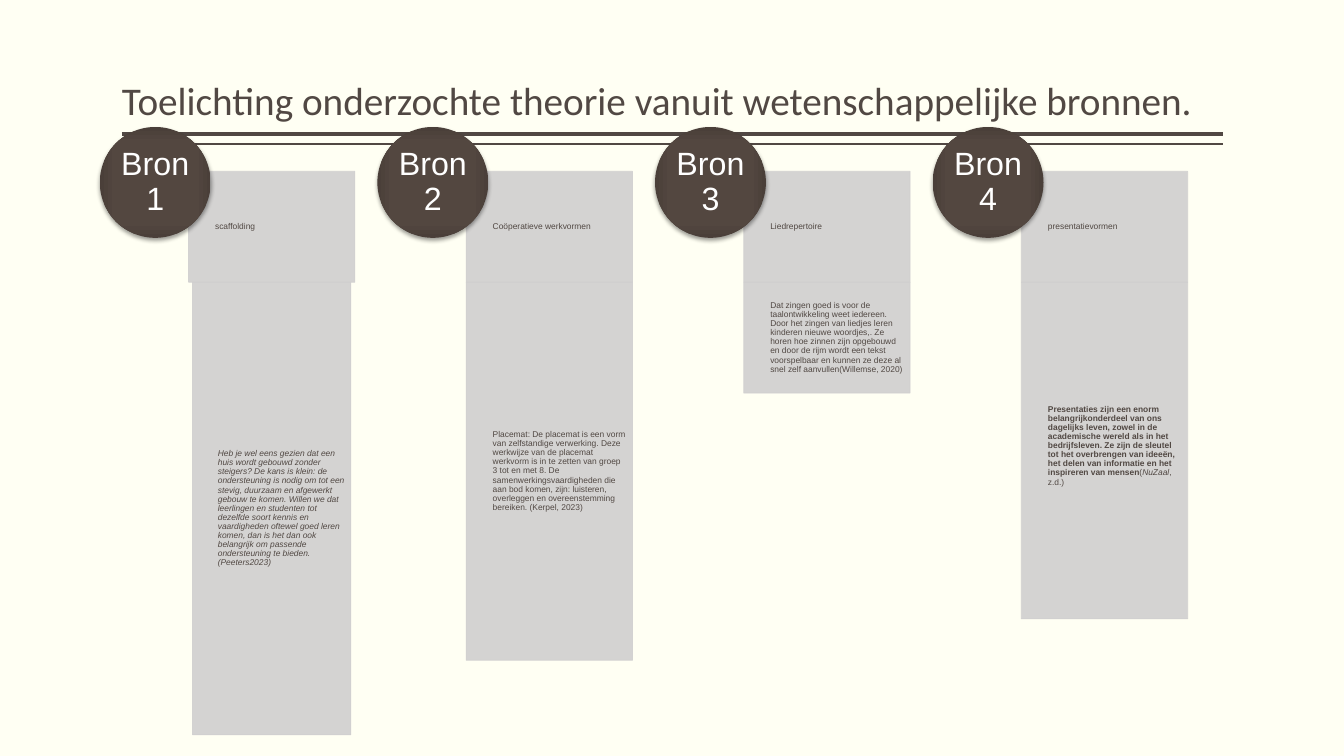
from dataclasses import dataclass

from lxml import etree
from pptx import Presentation
from pptx.dml.color import RGBColor
from pptx.enum.shapes import MSO_CONNECTOR, MSO_SHAPE
from pptx.enum.text import MSO_ANCHOR, PP_ALIGN
from pptx.oxml import parse_xml
from pptx.oxml.ns import qn
from pptx.util import Inches, Pt

RECT, OVAL = MSO_SHAPE.RECTANGLE, MSO_SHAPE.OVAL
STRAIGHT = MSO_CONNECTOR.STRAIGHT
MIDDLE, BOTTOM = MSO_ANCHOR.MIDDLE, MSO_ANCHOR.BOTTOM
LEFT, CENTER = PP_ALIGN.LEFT, PP_ALIGN.CENTER

INK, PAPER, GREY, WHITE = "514843", "FFFFF3", "D0CFCF", "FFFFFF"
STOPS = ((0, "544740"), (71, "534740"), (100, "4A3F39"))
NS = 'xmlns:a="http://schemas.openxmlformats.org/drawingml/2006/main"'

PITCH = 8.26 / 3
CARD_X, CARD_W = 1.87, 1.65
HEAD_Y, HEAD_H = 1.7, 1.1
DISC_X, DISC_Y, DISC_D = 0.99, 1.26, 1.1
LABEL_D = 0.78
TEXT_SHARE = 0.84  # share of a card's width that holds text


@dataclass(frozen=True)
class Box:
    x: float
    y: float
    w: float
    h: float


@dataclass(frozen=True)
class Piece:
    text: str
    bold: bool = False
    italic: bool = False


@dataclass(frozen=True)
class Style:
    size: float
    font: str = "Arial"
    color: str = INK
    align: PP_ALIGN = LEFT
    anchor: MSO_ANCHOR = MIDDLE
    inset: tuple[float, float, float, float] = (0, 0.05, 0.05, 0.05)


@dataclass(frozen=True)
class Source:
    topic: str
    pieces: tuple[Piece, ...]
    height: float
    trim: float = 0  # how far the body is narrowed on each side
    foot: float = 0.05


TITLE = Style(28, "Calibri", anchor=BOTTOM, inset=(0, 0.05, 0, 0.05))
LABEL = Style(23, color=WHITE, align=CENTER, inset=(0, 0, 0, 0))

SOURCES = (
    Source("scaffolding", (Piece(
        "Heb je wel eens gezien dat een huis wordt gebouwd zonder steigers? "
        "De kans is klein: de ondersteuning is nodig om tot een stevig, "
        "duurzaam en afgewerkt gebouw te komen. Willen we dat leerlingen en "
        "studenten tot dezelfde soort kennis en vaardigheden oftewel goed "
        "leren komen, dan is het dan ook belangrijk om passende "
        "ondersteuning te bieden.(Peeters2023)", italic=True),),
        4.49, trim=0.04),
    Source("Coöperatieve werkvormen", (Piece(
        "Placemat: De placemat is een vorm van zelfstandige verwerking. "
        "Deze werkwijze van de placemat werkvorm is in te zetten van groep "
        "3 tot en met 8. De samenwerkingsvaardigheden die aan bod komen, "
        "zijn: luisteren, overleggen en overeenstemming bereiken. "
        "(Kerpel, 2023)"),), 3.75),
    Source("Liedrepertoire", (Piece(
        "Dat zingen goed is voor de taalontwikkeling weet iedereen. Door "
        "het zingen van liedjes leren kinderen nieuwe woordjes,. Ze horen "
        "hoe zinnen zijn opgebouwd en door de rijm wordt een tekst "
        "voorspelbaar en kunnen ze deze al snel zelf aanvullen"
        "(Willemse, 2020)"),), 1.1),
    Source("presentatievormen", (
        Piece("Presentaties zijn een enorm belangrijkonderdeel van ons "
              "dagelijks leven, zowel in de academische wereld als in het "
              "bedrijfsleven. Ze zijn de sleutel tot het overbrengen van "
              "ideeën, het delen van informatie en het inspireren van mensen",
              bold=True),
        Piece("("), Piece("NuZaal", italic=True), Piece(", z.d.)")),
        3.34, foot=0.14),
)


def rgb(code: str) -> RGBColor:
    return RGBColor.from_string(code)


def add_text(slide, box: Box, pieces: tuple[Piece, ...], style: Style) -> None:
    shape = slide.shapes.add_textbox(*map(Inches, (box.x, box.y, box.w, box.h)))
    frame = shape.text_frame
    frame.word_wrap = True
    frame.vertical_anchor = style.anchor
    (frame.margin_left, frame.margin_top, frame.margin_right,
     frame.margin_bottom) = map(Inches, style.inset)
    para = frame.paragraphs[0]
    para.alignment = style.align
    para.line_spacing = 0.9
    para.font.size = Pt(style.size)
    para.font.name = style.font
    para.font.color.rgb = rgb(style.color)
    for piece in pieces:
        run = para.add_run()
        run.text = piece.text
        if piece.bold:
            run.font.bold = True
        if piece.italic:
            run.font.italic = True


def add_shape(slide, kind: MSO_SHAPE, box: Box):
    shape = slide.shapes.add_shape(
        kind, *map(Inches, (box.x, box.y, box.w, box.h)))
    shape.shadow.inherit = False
    return shape


def add_card(slide, box: Box, pieces: tuple[Piece, ...], foot: float) -> None:
    """Draw a see-through grey panel with text against its right side."""
    card = add_shape(slide, RECT, box)
    card.fill.solid()
    card.fill.fore_color.rgb = rgb(GREY)
    card.line.color.rgb = rgb(GREY)
    card.line.width = Pt(0.5)
    for color in card._element.spPr.iter(qn("a:srgbClr")):
        etree.SubElement(color, qn("a:alpha")).set("val", "90000")
    width = box.w * TEXT_SHARE
    area = Box(box.x + box.w - width, box.y, width, box.h)
    add_text(slide, area, pieces, Style(6, inset=(0, 0.05, 0.05, foot)))


def add_disc(slide, x: float, label: str) -> None:
    """Draw a shaded round badge with its label."""
    disc = add_shape(slide, OVAL, Box(x, DISC_Y, DISC_D, DISC_D))
    disc.line.fill.background()
    props = disc._element.spPr
    stops = "".join(f'<a:gs pos="{pos * 1000}"><a:srgbClr val="{code}"/></a:gs>'
                    for pos, code in STOPS)
    props.find(qn("a:ln")).addprevious(parse_xml(
        f'<a:gradFill {NS} rotWithShape="1"><a:gsLst>{stops}</a:gsLst>'
        '<a:path path="rect"><a:fillToRect l="50000" t="50000" r="50000" '
        'b="50000"/></a:path></a:gradFill>'))
    props.find(qn("a:effectLst")).append(parse_xml(
        f'<a:outerShdw {NS} blurRad="{Pt(3.1)}" dist="{Pt(2)}" dir="5400000" '
        'rotWithShape="0"><a:srgbClr val="000000"><a:alpha val="38000"/>'
        '</a:srgbClr></a:outerShdw>'))
    gap = (DISC_D - LABEL_D) / 2
    area = Box(x + gap, DISC_Y + gap, LABEL_D, LABEL_D)
    add_text(slide, area, (Piece(label),), LABEL)


def add_rule(slide, y: float, width: float) -> None:
    rule = slide.shapes.add_connector(
        STRAIGHT, Inches(1.21), Inches(y), Inches(12.13), Inches(y))
    rule.line.color.rgb = rgb(INK)
    rule.line.width = Pt(width)
    etree.SubElement(rule._element.spPr, qn("a:effectLst"))


def add_source(slide, index: int, source: Source) -> None:
    shift = index * PITCH
    x = CARD_X + shift
    add_card(slide, Box(x, HEAD_Y, CARD_W, HEAD_H), (Piece(source.topic),), 0.05)
    body = Box(x + source.trim, HEAD_Y + HEAD_H,
               CARD_W - 2 * source.trim, source.height)
    add_card(slide, body, source.pieces, source.foot)
    add_disc(slide, DISC_X + shift, f"Bron {index + 1}")


def main() -> None:
    deck = Presentation()
    deck.slide_width, deck.slide_height = Inches(13.33), Inches(7.5)
    slide = deck.slides.add_slide(deck.slide_layouts[6])
    slide.background.fill.solid()
    slide.background.fill.fore_color.rgb = rgb(PAPER)
    add_rule(slide, 1.33, 3)
    add_rule(slide, 1.43, 1)
    add_text(slide, Box(1.21, 0.08, 10.92, 1.2), (Piece(
        "Toelichting onderzochte theorie vanuit wetenschappelijke bronnen."),),
        TITLE)
    for index, source in enumerate(SOURCES):
        add_source(slide, index, source)
    deck.save("out.pptx")


if __name__ == "__main__":
    main()
